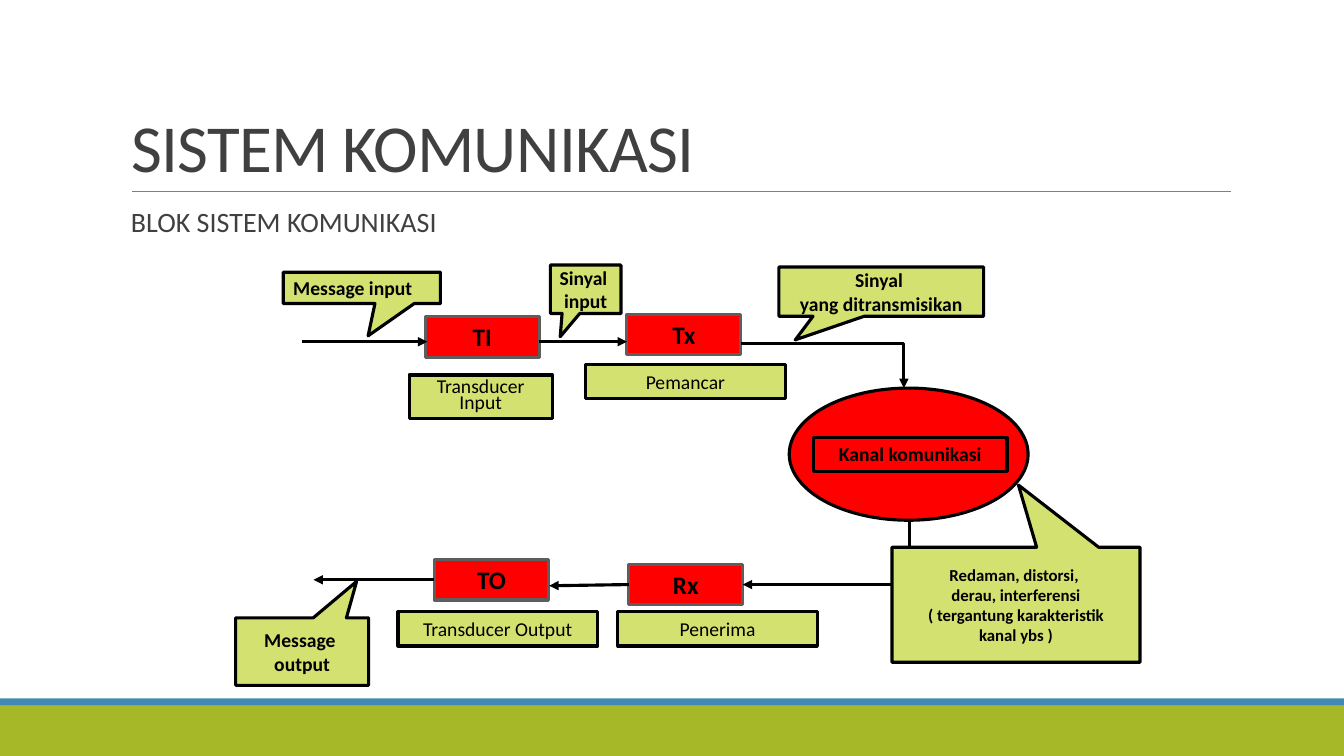
from dataclasses import dataclass

from pptx import Presentation
from pptx.dml.color import RGBColor
from pptx.enum import shapes, text
from pptx.oxml import ns, xmlchemy
from pptx.util import Cm, Pt


@dataclass(frozen=True)
class Theme:
    font: str = "Calibri"
    ink: str = "000000"
    heading: str = "404040"
    rule: str = "808080"
    red: str = "FF0000"
    block_edge: str = "5E5E5E"
    lime: str = "D3E171"
    footer: str = "A6B727"
    footer_edge: str = "418AB3"
    title_size: float = 48
    subtitle_size: float = 20
    block_size: float = 18
    label_size: float = 14
    small_size: float = 12
    stroke: float = 2.25


THEME = Theme()


@dataclass(frozen=True)
class Box:
    """A diagram shape; lengths are centimetres."""
    left: float
    top: float
    width: float
    height: float
    lines: tuple = ()
    size: float = THEME.label_size
    bold: bool = False
    fill: str | None = THEME.lime
    edge: str | None = THEME.ink
    kind: int = shapes.MSO_SHAPE.RECTANGLE
    tip: tuple = ()
    line_spacing: float | None = None
    align: int = text.PP_ALIGN.CENTER


@dataclass(frozen=True)
class Link:
    """A straight line; head and tail are the joined (block name, site)."""
    start: tuple
    end: tuple
    arrow: str | None = None
    begin_at: tuple | None = None
    end_at: tuple | None = None
    colour: str = THEME.ink
    width: float = THEME.stroke


def block(left: float, top: float, name: str) -> Box:
    return Box(left, top, 2.87, 1.02, (name,), THEME.block_size, True,
               THEME.red, THEME.block_edge)


def label(left: float, top: float, caption: str) -> Box:
    return Box(left, top, 5.03, 0.86, (caption,))


def callout(left: float, top: float, width: float, height: float, tip: tuple,
            *lines: str, size: float = THEME.label_size,
            align: int = text.PP_ALIGN.CENTER) -> Box:
    return Box(left, top, width, height, lines, size, True, tip=tip, align=align,
               kind=shapes.MSO_SHAPE.RECTANGULAR_CALLOUT)


BARS = [
    Box(0, 17.78, 33.87, 1.27, fill=THEME.footer, edge=None),
    Box(0, 17.6, 33.87, 0.18, fill=THEME.footer_edge, edge=None),
]
BLOCKS = {
    "TI": block(10.72, 7.98, "TI"),
    "Tx": block(15.8, 7.92, "Tx"),
    "Rx": block(15.85, 14.22, "Rx"),
    "TO": block(10.95, 14.1, "TO"),
}
CHANNEL = [
    Box(19.89, 9.78, 6.02, 3.33, fill=THEME.red, kind=shapes.MSO_SHAPE.OVAL),
    Box(20.5, 11.02, 4.88, 0.86, ("Kanal komunikasi",), bold=True, fill=None),
]
LINKS = [
    Link((3.33, 4.83), (31.01, 4.83), colour=THEME.rule, width=0.5),
    Link((22.91, 13.11), (22.91, 14.73)),
    Link((7.62, 8.61), (10.77, 8.61), "tail"),
    Link((13.59, 8.61), (15.8, 8.61), "tail"),
    Link((18.72, 14.73), (22.91, 14.73), "head", begin_at=("Rx", 3)),
    Link((13.84, 14.76), (15.85, 14.73), "head", end_at=("Rx", 1)),
    Link((7.9, 14.61), (10.95, 14.61), "head", end_at=("TO", 1)),
]
ELBOW = [(18.67, 8.66), (22.78, 8.66), (22.78, 9.78)]
NOTES = [
    Box(10.31, 9.45, 3.61, 1.09, ("Transducer Input",), line_spacing=0.7),
    label(14.76, 9.19, "Pemancar"),
    label(10.03, 15.42, "Transducer Output"),
    label(15.57, 15.42, "Penerima"),
    callout(7.14, 6.86, 3.96, 0.79, (0.04, 1.53), "Message input",
            align=text.PP_ALIGN.LEFT),
    callout(13.87, 6.68, 1.78, 1.22, (-0.36, 0.98), "Sinyal ", "input"),
    callout(19.63, 6.73, 5.16, 1.24, (-0.42, 0.98), "Sinyal ", "yang ditransmisikan"),
    callout(5.94, 15.57, 3.35, 1.7, (0.41, -1.04), "Message ", "output"),
    callout(22.48, 13.79, 6.25, 2.9, (0.01, -1.04), "Redaman, distorsi, ",
            "derau, interferensi", "( tergantung karakteristik", "kanal ybs )",
            size=THEME.small_size),
]


def add_run(paragraph, words: str, size: float, colour: str, bold: bool = False):
    run = paragraph.add_run()
    run.text = words
    run.font.name = THEME.font
    run.font.size = Pt(size)
    run.font.bold = bold
    run.font.color.rgb = RGBColor.from_string(colour)
    return run


def style_line(line, colour: str, width: float, arrow: str | None = None) -> None:
    line.color.rgb = RGBColor.from_string(colour)
    line.width = Pt(width)
    if arrow:
        end = xmlchemy.OxmlElement(f"a:{arrow}End")
        end.set("type", "triangle")
        line._get_or_add_ln().append(end)


def draw_box(slide, box: Box):
    shape = slide.shapes.add_shape(
        box.kind, Cm(box.left), Cm(box.top), Cm(box.width), Cm(box.height))
    shape.shadow.inherit = False
    if box.fill:
        shape.fill.solid()
        shape.fill.fore_color.rgb = RGBColor.from_string(box.fill)
    else:
        shape.fill.background()
    if box.edge:
        style_line(shape.line, box.edge, THEME.stroke)
    else:
        shape.line.fill.background()
    for index, value in enumerate(box.tip):
        shape.adjustments[index] = value
    frame = shape.text_frame
    frame.word_wrap = not box.tip
    frame.vertical_anchor = text.MSO_ANCHOR.MIDDLE if box.tip else text.MSO_ANCHOR.TOP
    for index, words in enumerate(box.lines):
        paragraph = frame.add_paragraph() if index else frame.paragraphs[0]
        paragraph.alignment = box.align
        paragraph.line_spacing = box.line_spacing
        add_run(paragraph, words, box.size, THEME.ink, box.bold)
    return shape


def draw_link(slide, link: Link, blocks: dict) -> None:
    connector = slide.shapes.add_connector(
        shapes.MSO_CONNECTOR.STRAIGHT, *map(Cm, link.start + link.end))
    if link.begin_at:
        connector.begin_connect(blocks[link.begin_at[0]], link.begin_at[1])
    if link.end_at:
        connector.end_connect(blocks[link.end_at[0]], link.end_at[1])
    style_line(connector.line, link.colour, link.width, link.arrow)
    properties = connector._element.find(ns.qn("p:spPr"))
    properties.append(xmlchemy.OxmlElement("a:effectLst"))


def draw_elbow(slide, points: list) -> None:
    start, *rest = [(Cm(x), Cm(y)) for x, y in points]
    builder = slide.shapes.build_freeform(*start)
    builder.add_line_segments(rest, close=False)
    shape = builder.convert_to_shape()
    shape.shadow.inherit = False
    shape.fill.background()
    style_line(shape.line, THEME.ink, THEME.stroke, "tail")


def draw_headings(slide) -> None:
    title = slide.shapes.title
    title.left, title.top, title.width, title.height = map(Cm, (3.05, 0.79, 27.94, 4.04))
    frame = title.text_frame
    frame.word_wrap = True
    frame.auto_size = text.MSO_AUTO_SIZE.NONE
    frame.vertical_anchor = text.MSO_ANCHOR.BOTTOM
    paragraph = frame.paragraphs[0]
    paragraph.alignment = text.PP_ALIGN.LEFT
    paragraph.line_spacing = 0.85
    run = add_run(paragraph, "SISTEM KOMUNIKASI", THEME.title_size, THEME.heading)
    run.font._element.set("spc", "-50")

    subtitle = slide.shapes.add_textbox(*map(Cm, (3.3, 5.13, 27.69, 1.1))).text_frame
    subtitle.word_wrap = True
    subtitle.margin_left = subtitle.margin_right = 0
    paragraph = subtitle.paragraphs[0]
    paragraph.line_spacing = 0.9
    add_run(paragraph, "BLOK SISTEM KOMUNIKASI", THEME.subtitle_size, THEME.heading)


def main() -> None:
    presentation = Presentation()
    presentation.slide_width, presentation.slide_height = Cm(33.87), Cm(19.05)
    slide = presentation.slides.add_slide(presentation.slide_layouts[5])
    draw_headings(slide)
    for box in BARS + CHANNEL:
        draw_box(slide, box)
    blocks = {name: draw_box(slide, box) for name, box in BLOCKS.items()}
    for link in LINKS:
        draw_link(slide, link, blocks)
    draw_elbow(slide, ELBOW)
    for note in NOTES:
        draw_box(slide, note)
    presentation.save("out.pptx")


if __name__ == "__main__":
    main()
